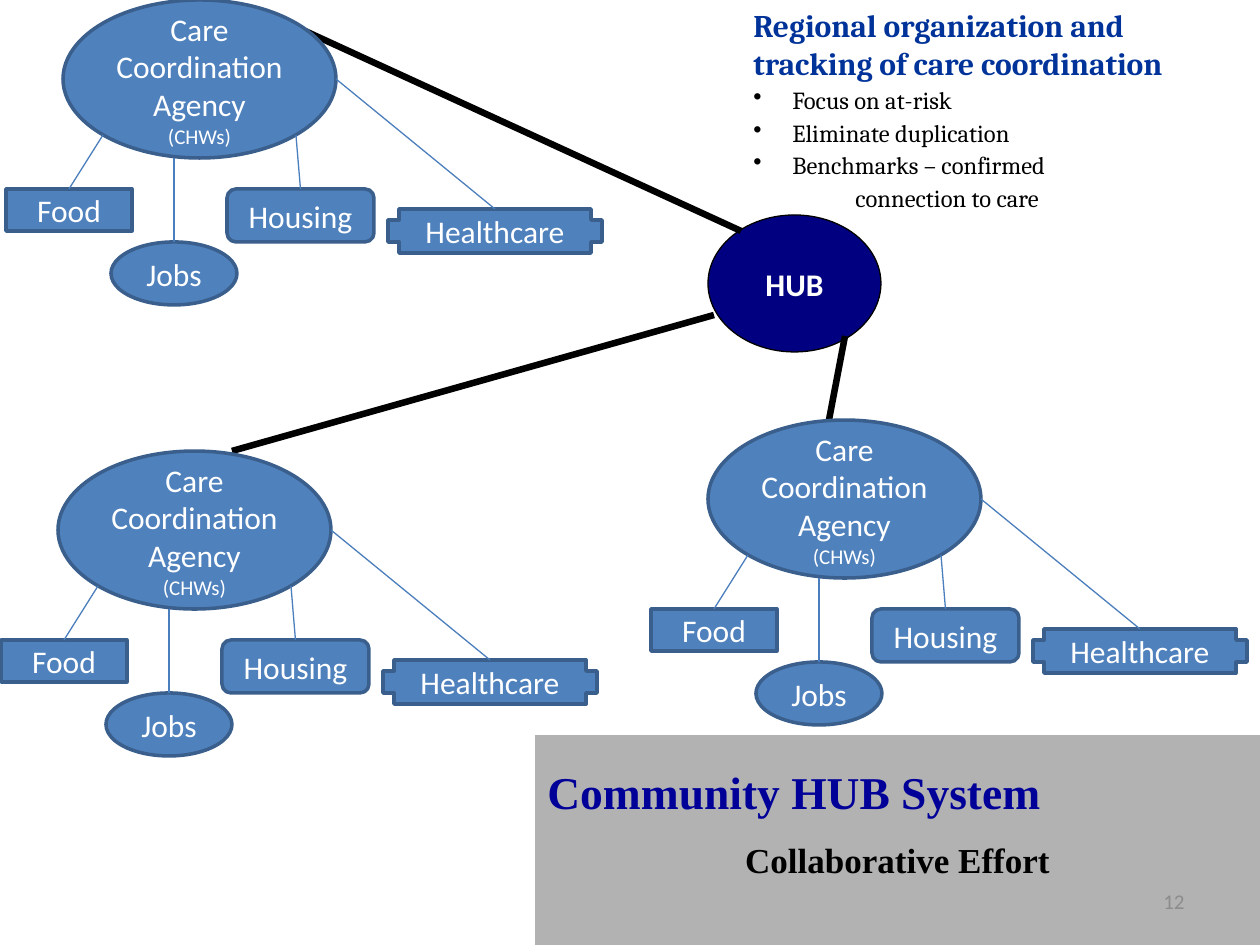
from pptx import Presentation
from pptx.dml.color import RGBColor
from pptx.enum.shapes import MSO_CONNECTOR, MSO_SHAPE
from pptx.enum.text import MSO_ANCHOR, PP_ALIGN
from pptx.oxml.xmlchemy import OxmlElement
from pptx.util import Emu, Pt

RECT = MSO_SHAPE.RECTANGLE
OVAL = MSO_SHAPE.OVAL
ROUND = MSO_SHAPE.ROUNDED_RECTANGLE
CROSS = MSO_SHAPE.CROSS
LINE = MSO_CONNECTOR.STRAIGHT
LEFT, MID, RIGHT = PP_ALIGN.LEFT, PP_ALIGN.CENTER, PP_ALIGN.RIGHT
TOP, MIDDLE = MSO_ANCHOR.TOP, MSO_ANCHOR.MIDDLE
SANS, SERIF, TIMES = "Calibri", "Cambria", "Times New Roman"
WHITE, BLACK = "FFFFFF", "000000"


def px(n):
    return Emu(round(n * 914400 / 126))


def color(code):
    return RGBColor.from_string(code)


def write(frame, lines, align, anchor):
    frame.word_wrap = True
    frame.vertical_anchor = anchor
    frame.text = "\n".join(line[0] for line in lines)
    for para, (_, size, face, code, bold) in zip(frame.paragraphs, lines):
        para.alignment = align
        font = para.runs[0].font
        font.size, font.name, font.bold = Pt(size), face, bold
        font.color.rgb = color(code)


def shape(slide, kind, box, fill, edge, width, lines, anchor=MIDDLE):
    item = slide.shapes.add_shape(kind, *map(px, box))
    item.shadow.inherit = False
    item.fill.solid()
    item.fill.fore_color.rgb = color(fill)
    if edge:
        item.line.color.rgb = color(edge)
        item.line.width = Pt(width)
    else:
        item.line.fill.background()
    write(item.text_frame, lines, MID, anchor)
    return item


def label(slide, box, lines, align, anchor):
    item = slide.shapes.add_textbox(*map(px, box))
    write(item.text_frame, lines, align, anchor)
    return item.text_frame


def link(slide, start, end, code, width):
    item = slide.shapes.add_connector(LINE, *map(px, start + end))
    item.line.color.rgb = color(code)
    item.line.width = Pt(width)
    item._element.spPr.append(OxmlElement("a:effectLst"))
    return item


def agency(slide, left, top):
    def part(kind, x, y, w, h, lines):
        box = (left + x, top + y, w, h)
        return shape(slide, kind, box, "4F81BD", "3A5F8C", 2, lines)

    part(OVAL, 57, 0, 273, 158, [
        ("Care Coordination Agency", 18, SANS, WHITE, False),
        ("(CHWs)", 12, SANS, WHITE, False),
    ])
    needs = [
        ("Food", RECT, (0, 189, 126, 42), (97, 135)),
        ("Jobs", OVAL, (105, 242, 126, 63), (168, 158)),
        ("Housing", ROUND, (221, 189, 147, 53), (290, 135)),
        ("Healthcare", CROSS, (382, 209, 214, 44), (330, 79)),
    ]
    for name, kind, (x, y, w, h), (endx, endy) in needs:
        item = part(kind, x, y, w, h, [(name, 18, SANS, WHITE, False)])
        start = (left + x + w // 2, top + y)
        line = link(slide, start, (left + endx, top + endy), "4B7EBC", 0.75)
        line.begin_connect(item, 0)


def hub(slide, left, top):
    def spoke(start, end):
        link(slide, (left + start[0], top + start[1]), end, BLACK, 3.75)

    spoke((6, 100), (232, 451))
    item = shape(slide, OVAL, (left, top, 173, 137), "000080", BLACK, 0.75,
                 [("HUB", 18, SANS, WHITE, True)])
    item.text_frame.word_wrap = False
    spoke((137, 121), (829, 420))
    spoke((33, 16), (305, 31))


def goals(slide, box):
    points = ["Focus on at-risk", "Eliminate duplication",
              "Benchmarks – confirmed", "connection to care"]
    lines = [("Regional organization and tracking of care coordination",
              18, SERIF, "003399", True)]
    lines += [(point, 14, SERIF, BLACK, False) for point in points]
    frame = label(slide, box, lines, LEFT, TOP)
    for para in frame.paragraphs:
        para.space_before = Pt(1.8)
    for para in frame.paragraphs[1:4]:
        props = para._p.get_or_add_pPr()
        props.set("marL", str(px(39)))
        props.set("indent", str(-px(39)))
        mark = OxmlElement("a:buChar")
        mark.set("char", "•")
        props.append(mark)
    last = frame.paragraphs[4]
    last.level = 1
    props = last._p.get_or_add_pPr()
    props.set("marL", str(px(102)))
    props.set("indent", "0")


def banner(slide, left, top, width, height):
    item = shape(slide, RECT, (left, top, width, height), "B2B2B2", None, 0, [
        ("Community HUB System", 26, TIMES, "000099", True),
        ("Collaborative Effort", 20, TIMES, BLACK, True),
    ], TOP)
    frame = item.text_frame
    frame.margin_top = px(29)
    head, sub = frame.paragraphs
    head.alignment = LEFT
    sub.space_before = Pt(11.5)
    label(slide, (left + 368, top + 141, 294, 50),
          [("12", 12, SANS, "8C8C8C", False)], RIGHT, MIDDLE)


def main():
    deck = Presentation()
    deck.slide_width, deck.slide_height = px(1260), px(945)
    slide = deck.slides.add_slide(deck.slide_layouts[6])
    hub(slide, 708, 215)
    goals(slide, (741, 0, 504, 219))
    banner(slide, 535, 735, 725, 210)
    for left, top in [(6, 0), (651, 420), (1, 451)]:
        agency(slide, left, top)
    deck.save("out.pptx")


if __name__ == "__main__":
    main()
